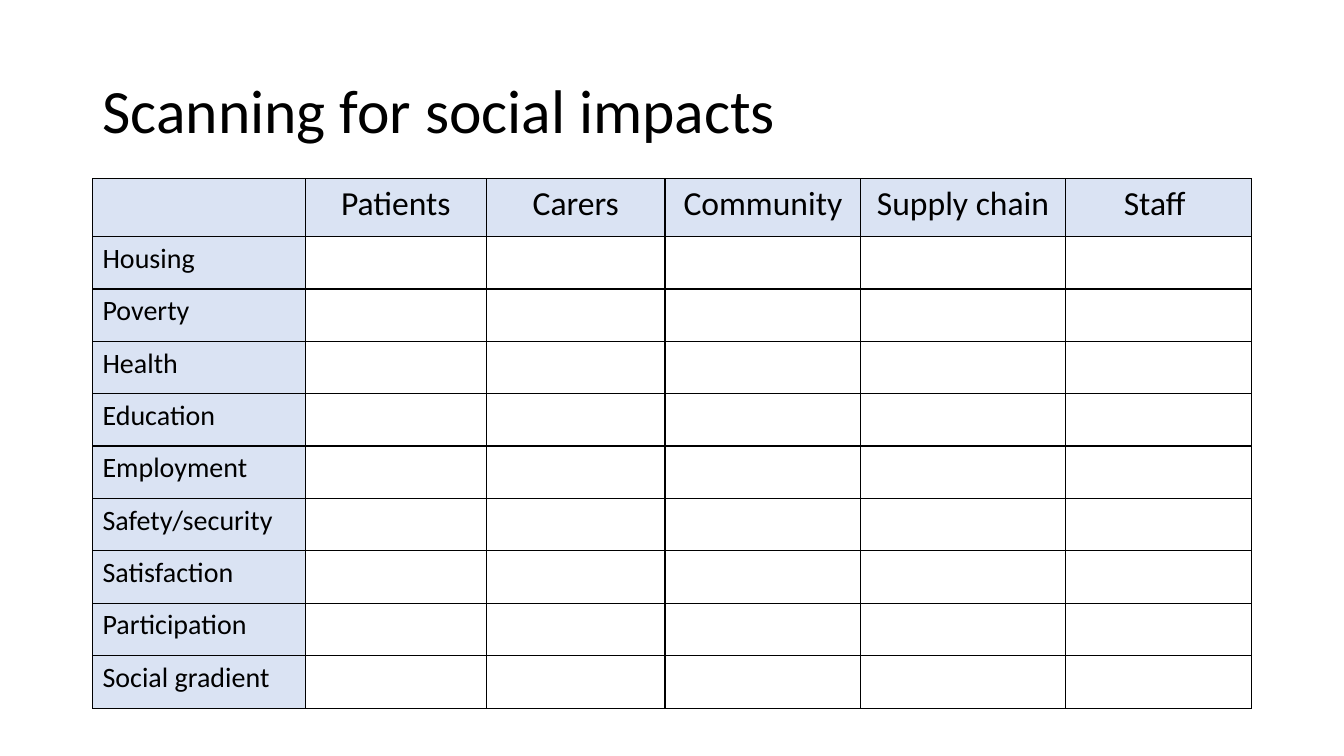
"""Build a slide with a blank grid for scanning social impacts by group."""
from pptx import Presentation
from pptx.dml.color import RGBColor
from pptx.enum import text
from pptx.oxml import parse_xml
from pptx.oxml.ns import nsdecls
from pptx.util import Cm, Pt

HEADING = "Scanning for social impacts"
GROUPS = ["Patients", "Carers", "Community", "Supply chain", "Staff "]
IMPACTS = ["Housing", "Poverty", "Health", "Education", "Employment",
           "Safety/security", "Satisfaction", "Participation", "Social gradient"]
COLUMN_WIDTHS = [5.36, 4.57, 4.5, 4.93, 5.16, 4.69]
HEADER_HEIGHT, IMPACT_HEIGHT = 1.47, 1.32
LEFT, WIDTH, GRID_TOP = 2.33, 29.21, 4.49
INK, LABEL_FILL, BLANK_FILL = "000000", "DAE3F3", "FFFFFF"
INNER_LINE, OUTER_LINE = 1, 0.25


def color(value):
    return RGBColor.from_string(value)


def style(paragraph, size, align):
    paragraph.alignment = align
    paragraph.font.name = "Calibri"
    paragraph.font.size = Pt(size)
    paragraph.font.color.rgb = color(INK)


def add_borders(cell, outer_sides):
    properties = cell._tc.get_or_add_tcPr()
    for index, (side, outer) in enumerate(outer_sides.items()):
        width = Pt(OUTER_LINE if outer else INNER_LINE)
        properties.insert(index, parse_xml(
            f'<a:{side} {nsdecls("a")} w="{width}"><a:solidFill>'
            f'<a:srgbClr val="{INK}"/></a:solidFill></a:{side}>'))


def add_heading(slide):
    heading = slide.shapes.title
    heading.left, heading.top = Cm(LEFT), Cm(1.01)
    heading.width, heading.height = Cm(WIDTH), Cm(3.68)
    frame = heading.text_frame
    frame.text = HEADING
    frame.auto_size = text.MSO_AUTO_SIZE.NONE
    frame.vertical_anchor = text.MSO_ANCHOR.MIDDLE
    frame.paragraphs[0].line_spacing = 0.9
    style(frame.paragraphs[0], 44, text.PP_ALIGN.LEFT)


def add_grid(slide):
    labels = [["", *GROUPS]] + [[impact] + [""] * len(GROUPS) for impact in IMPACTS]
    heights = [HEADER_HEIGHT] + [IMPACT_HEIGHT] * len(IMPACTS)
    last_row, last_column = len(IMPACTS), len(GROUPS)
    grid = slide.shapes.add_table(
        len(heights), len(COLUMN_WIDTHS), Cm(LEFT), Cm(GRID_TOP),
        Cm(WIDTH), Cm(sum(heights))).table
    grid.first_row = grid.horz_banding = False
    for column, width in zip(grid.columns, COLUMN_WIDTHS):
        column.width = Cm(width)
    for row, height in zip(grid.rows, heights):
        row.height = Cm(height)

    for r, row_labels in enumerate(labels):
        for c, label in enumerate(row_labels):
            cell = grid.cell(r, c)
            cell.fill.solid()
            cell.fill.fore_color.rgb = color(BLANK_FILL if r and c else LABEL_FILL)
            add_borders(cell, {"lnL": c == 0, "lnR": c == last_column,
                               "lnT": r == 0, "lnB": r == last_row})
            if label:
                cell.text = label
                style(cell.text_frame.paragraphs[0], 20 if r else 24,
                      text.PP_ALIGN.LEFT if r else text.PP_ALIGN.CENTER)


def main():
    deck = Presentation()
    deck.slide_width, deck.slide_height = Cm(33.87), Cm(19.05)
    slide = deck.slides.add_slide(deck.slide_layouts[5])
    add_heading(slide)
    add_grid(slide)
    deck.save("out.pptx")


if __name__ == "__main__":
    main()
